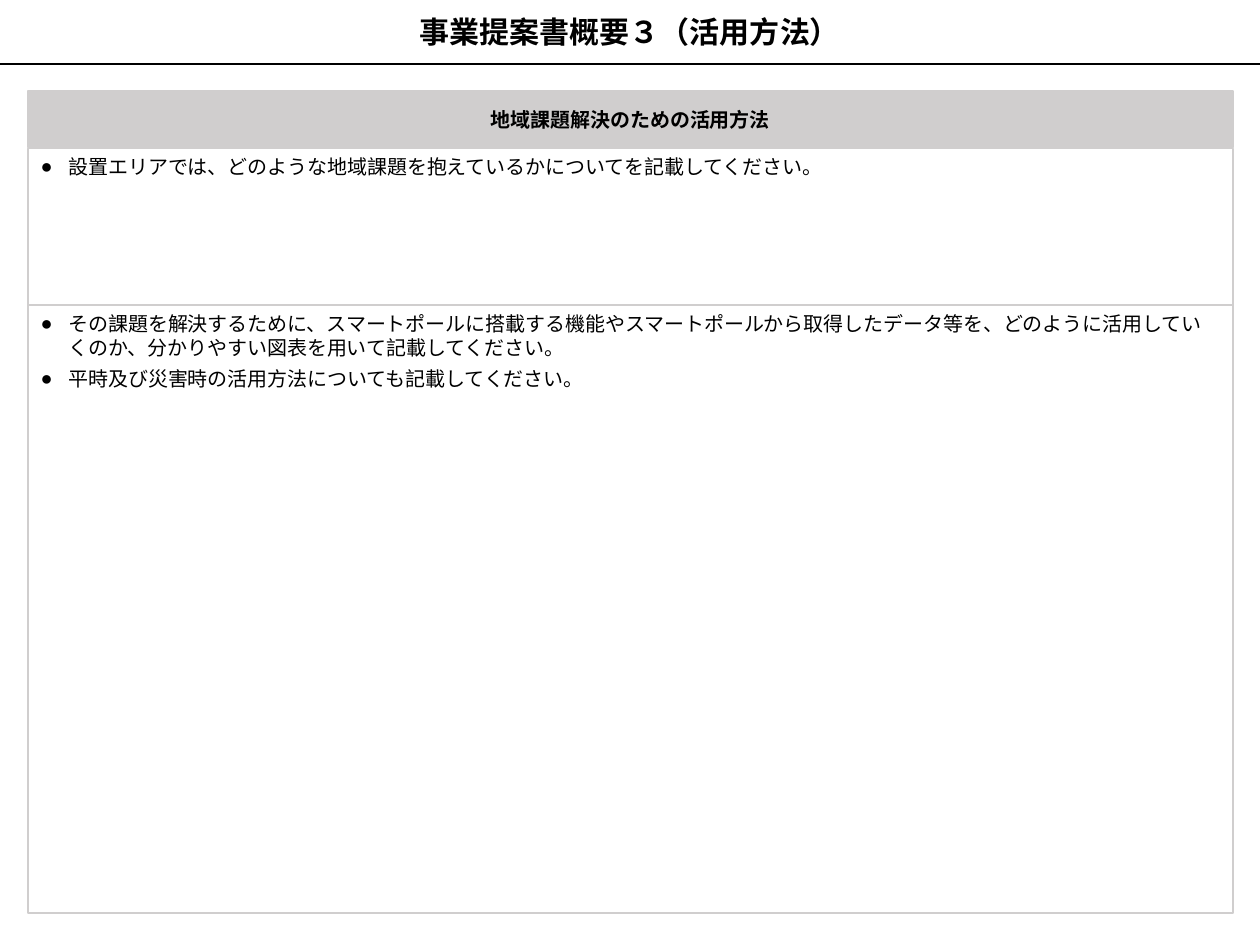
from lxml import etree
from pptx import Presentation
from pptx.dml.color import RGBColor
from pptx.enum.shapes import MSO_CONNECTOR, MSO_SHAPE
from pptx.enum.text import MSO_ANCHOR, PP_ALIGN
from pptx.oxml.ns import qn
from pptx.util import Inches, Pt

RECTANGLE = MSO_SHAPE.RECTANGLE
STRAIGHT = MSO_CONNECTOR.STRAIGHT
TOP, MIDDLE = MSO_ANCHOR.TOP, MSO_ANCHOR.MIDDLE
LEFT, CENTER = PP_ALIGN.LEFT, PP_ALIGN.CENTER

BLACK = RGBColor(0x00, 0x00, 0x00)
WHITE = RGBColor(0xFF, 0xFF, 0xFF)
GRAY = RGBColor(0xD0, 0xCE, 0xCE)

SLIDE_WIDTH, SLIDE_HEIGHT = 14, 10.5
TITLE_HEIGHT = 0.71
PANEL_LEFT, PANEL_WIDTH = 0.31, 13.39
BULLET_INDENT = 0.31

TITLE = "事業提案書概要３（活用方法）"
HEADING = "地域課題解決のための活用方法"
ISSUE_GUIDANCE = ["設置エリアでは、どのような地域課題を抱えているかについてを記載してください。"]
USAGE_GUIDANCE = [
    "その課題を解決するために、スマートポールに搭載する機能やスマートポールから取得したデータ等を、"
    "どのように活用していくのか、分かりやすい図表を用いて記載してください。",
    "平時及び災害時の活用方法についても記載してください。",
]


def add_box(slide, left, top, width, height, fill, border, border_width):
    """Add a flat rectangle with a solid fill and border."""
    box = slide.shapes.add_shape(
        RECTANGLE, Inches(left), Inches(top), Inches(width), Inches(height))
    box.shadow.inherit = False
    box.fill.solid()
    box.fill.fore_color.rgb = fill
    box.line.color.rgb = border
    box.line.width = Pt(border_width)
    return box


def write_text(box, lines, font, size, bold, align, anchor):
    """Write one paragraph per line and format it."""
    frame = box.text_frame
    frame.word_wrap = True
    frame.vertical_anchor = anchor
    frame.text = "\n".join(lines)
    for paragraph in frame.paragraphs:
        paragraph.alignment = align
        for run in paragraph.runs:
            run.font.name = font
            run.font.size = Pt(size)
            run.font.bold = bold
            run.font.color.rgb = BLACK


def add_bullet(paragraph):
    """Give a paragraph a round bullet with a hanging indent."""
    paragraph.space_before = Pt(6)
    properties = paragraph._p.get_or_add_pPr()
    properties.set("marL", str(Inches(BULLET_INDENT)))
    properties.set("indent", str(-Inches(BULLET_INDENT)))
    etree.SubElement(properties, qn("a:buFont"), typeface="Arial")
    etree.SubElement(properties, qn("a:buChar"), char="●")


def add_panel(slide, top, height, fill):
    """Add a gray-bordered panel with the shared margins."""
    panel = add_box(slide, PANEL_LEFT, top, PANEL_WIDTH, height, fill, GRAY, 1.5)
    frame = panel.text_frame
    frame.margin_left = frame.margin_right = Inches(0.14)
    frame.margin_top = frame.margin_bottom = Inches(0.07)
    return panel


def add_title(slide):
    """Add the title band and the rule beneath it."""
    band = add_box(slide, 0, 0, SLIDE_WIDTH, TITLE_HEIGHT, WHITE, WHITE, 1)
    write_text(band, [TITLE], "Arial", 24, True, CENTER, MIDDLE)
    rule = slide.shapes.add_connector(
        STRAIGHT, 0, Inches(TITLE_HEIGHT), Inches(SLIDE_WIDTH), Inches(TITLE_HEIGHT))
    rule.line.color.rgb = BLACK
    rule.line.width = Pt(1.5)
    etree.SubElement(rule._element.spPr, qn("a:effectLst"))


def add_heading(slide, top, height):
    """Add the gray heading panel."""
    heading = add_panel(slide, top, height, GRAY)
    write_text(heading, [HEADING], "Calibri", 16, True, CENTER, MIDDLE)
    heading.text_frame.word_wrap = False


def add_guidance(slide, top, height, lines):
    """Add a white panel with bulleted guidance."""
    panel = add_panel(slide, top, height, WHITE)
    write_text(panel, lines, "Calibri", 16, False, LEFT, TOP)
    for paragraph in panel.text_frame.paragraphs:
        add_bullet(paragraph)


def main():
    """Build and save the slide."""
    presentation = Presentation()
    presentation.slide_width = Inches(SLIDE_WIDTH)
    presentation.slide_height = Inches(SLIDE_HEIGHT)
    slide = presentation.slides.add_slide(presentation.slide_layouts[6])
    add_title(slide)
    add_heading(slide, 1.01, 0.63)
    add_guidance(slide, 1.65, 1.88, ISSUE_GUIDANCE)
    add_guidance(slide, 3.39, 6.76, USAGE_GUIDANCE)
    presentation.save("out.pptx")


if __name__ == "__main__":
    main()
